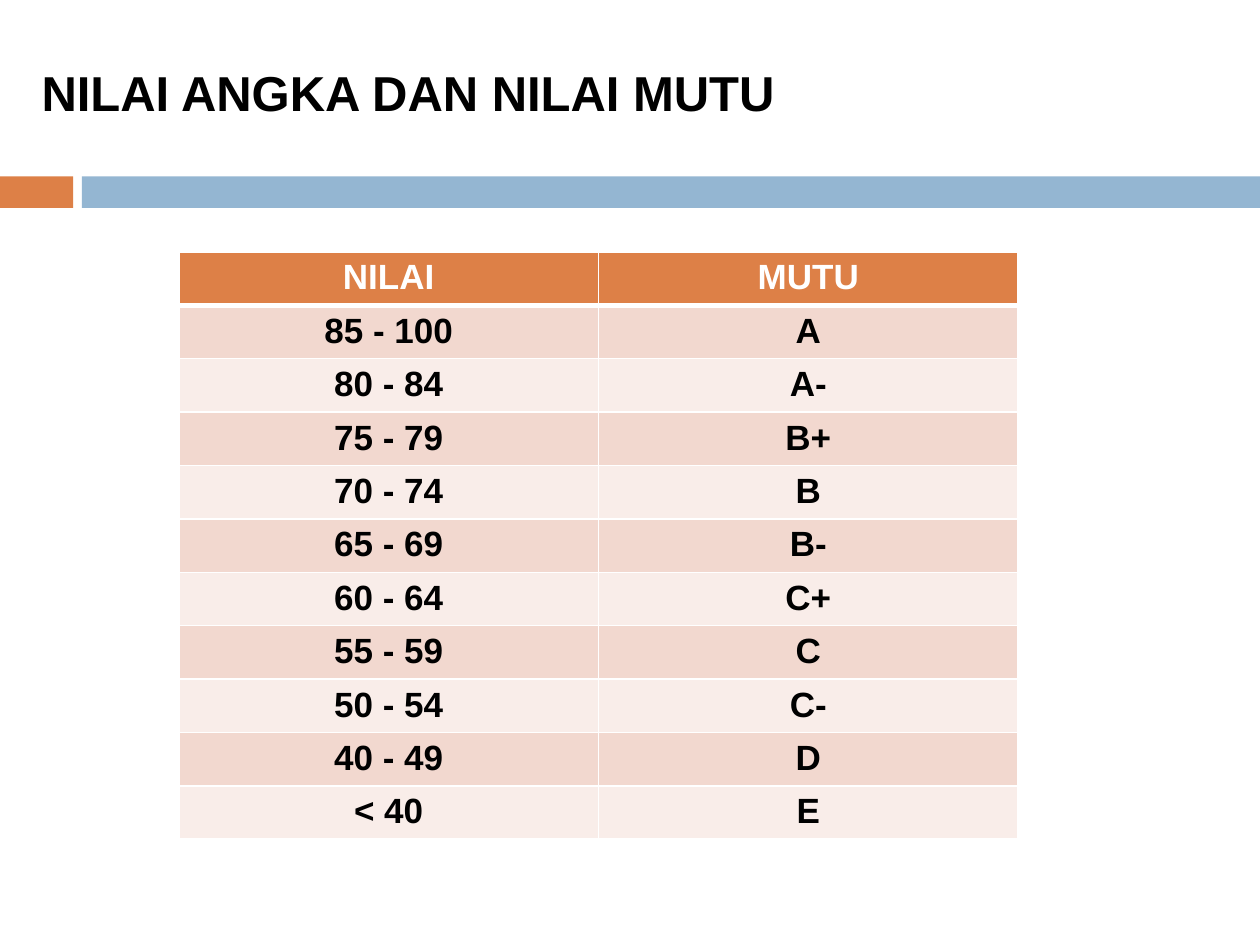
from dataclasses import dataclass

from lxml.etree import SubElement
from pptx import Presentation
from pptx.dml.color import RGBColor
from pptx.enum.shapes import MSO_SHAPE
from pptx.enum.text import PP_ALIGN
from pptx.oxml.ns import qn
from pptx.slide import Slide
from pptx.table import _Cell
from pptx.text.text import TextFrame
from pptx.util import Inches, Pt

ORANGE = RGBColor(0xDD, 0x80, 0x47)
BLUE = RGBColor(0x94, 0xB6, 0xD2)
DARK_BAND = RGBColor(0xF2, 0xD8, 0xCF)
LIGHT_BAND = RGBColor(0xF9, 0xED, 0xE9)
WHITE = RGBColor(0xFF, 0xFF, 0xFF)
BLACK = RGBColor(0, 0, 0)

COLUMN_WIDTH = 3.33
ROW_HEIGHT = 0.41


@dataclass(frozen=True)
class Bar:
    left: float
    width: float
    color: RGBColor


@dataclass(frozen=True)
class Grade:
    score: str
    letter: str


BARS = [Bar(0, 0.58, ORANGE), Bar(0.65, 9.35, BLUE)]
HEADER = Grade("NILAI", "MUTU")
GRADES = [
    Grade("85 - 100", "A"),
    Grade("80 - 84", "A-"),
    Grade("75 - 79", "B+"),
    Grade("70 - 74", "B"),
    Grade("65 - 69", "B-"),
    Grade("60 - 64", "C+"),
    Grade("55 - 59", "C"),
    Grade("50 - 54", "C-"),
    Grade("40 - 49", "D"),
    Grade("< 40", "E"),
]


def write_text(frame: TextFrame, text: str, *, size: float, color: RGBColor = BLACK,
               align: PP_ALIGN = PP_ALIGN.LEFT, space_before: float = 0) -> None:
    para = frame.paragraphs[0]
    para.alignment = align
    para.space_before = Pt(space_before)
    span = para.add_run()
    span.text = text
    span.font.name = "Arial"
    span.font.size = Pt(size)
    span.font.bold = True
    span.font.color.rgb = color


def draw_bar(page: Slide, bar: Bar) -> None:
    box = page.shapes.add_shape(MSO_SHAPE.RECTANGLE, Inches(bar.left), Inches(1.4),
                                Inches(bar.width), Inches(0.25))
    box.shadow.inherit = False
    box.fill.solid()
    box.fill.fore_color.rgb = bar.color
    box.line.fill.background()


def draw_title(page: Slide, text: str) -> None:
    box = page.shapes.add_textbox(Inches(0.25), Inches(0.5), Inches(9.5), Inches(6.67))
    frame = box.text_frame
    frame.word_wrap = True
    frame.margin_left = Inches(0.08)
    frame.margin_top = 0
    write_text(frame, text, size=28, space_before=7)


def style_cell(cell: _Cell, fill: RGBColor, top: float, bottom: float) -> None:
    """Set the margins, white borders (widths in points) and fill of a cell."""
    cell.margin_top = Inches(0.05)
    cell.margin_bottom = Inches(0.04)
    properties = cell._tc.get_or_add_tcPr()
    for side, width in (("L", 1), ("R", 1), ("T", top), ("B", bottom)):
        line = SubElement(properties, qn(f"a:ln{side}"), w=str(Pt(width)))
        solid = SubElement(line, qn("a:solidFill"))
        SubElement(solid, qn("a:srgbClr"), val=str(WHITE))
    cell.fill.solid()
    cell.fill.fore_color.rgb = fill


def draw_grade_table(page: Slide, header: Grade, grades: list[Grade]) -> None:
    rows = [header, *grades]
    table = page.shapes.add_table(len(rows), 2, Inches(1.42), Inches(2),
                                  Inches(2 * COLUMN_WIDTH),
                                  Inches(len(rows) * ROW_HEIGHT)).table
    for column in table.columns:
        column.width = Inches(COLUMN_WIDTH)
    for index, grade in enumerate(rows):
        table.rows[index].height = Inches(ROW_HEIGHT)
        is_header = index == 0
        band = DARK_BAND if index % 2 else LIGHT_BAND
        for cell, text in zip(table.rows[index].cells, (grade.score, grade.letter)):
            style_cell(cell, ORANGE if is_header else band,
                       top=3 if index == 1 else 1, bottom=3 if is_header else 1)
            write_text(cell.text_frame, text, size=20, align=PP_ALIGN.CENTER,
                       color=WHITE if is_header else BLACK)


def main() -> None:
    deck = Presentation()
    deck.slide_width = Inches(10)
    deck.slide_height = Inches(7.5)
    page = deck.slides.add_slide(deck.slide_layouts[6])
    for bar in BARS:
        draw_bar(page, bar)
    draw_title(page, "NILAI ANGKA DAN NILAI MUTU")
    draw_grade_table(page, HEADER, GRADES)
    deck.save("out.pptx")


if __name__ == "__main__":
    main()
